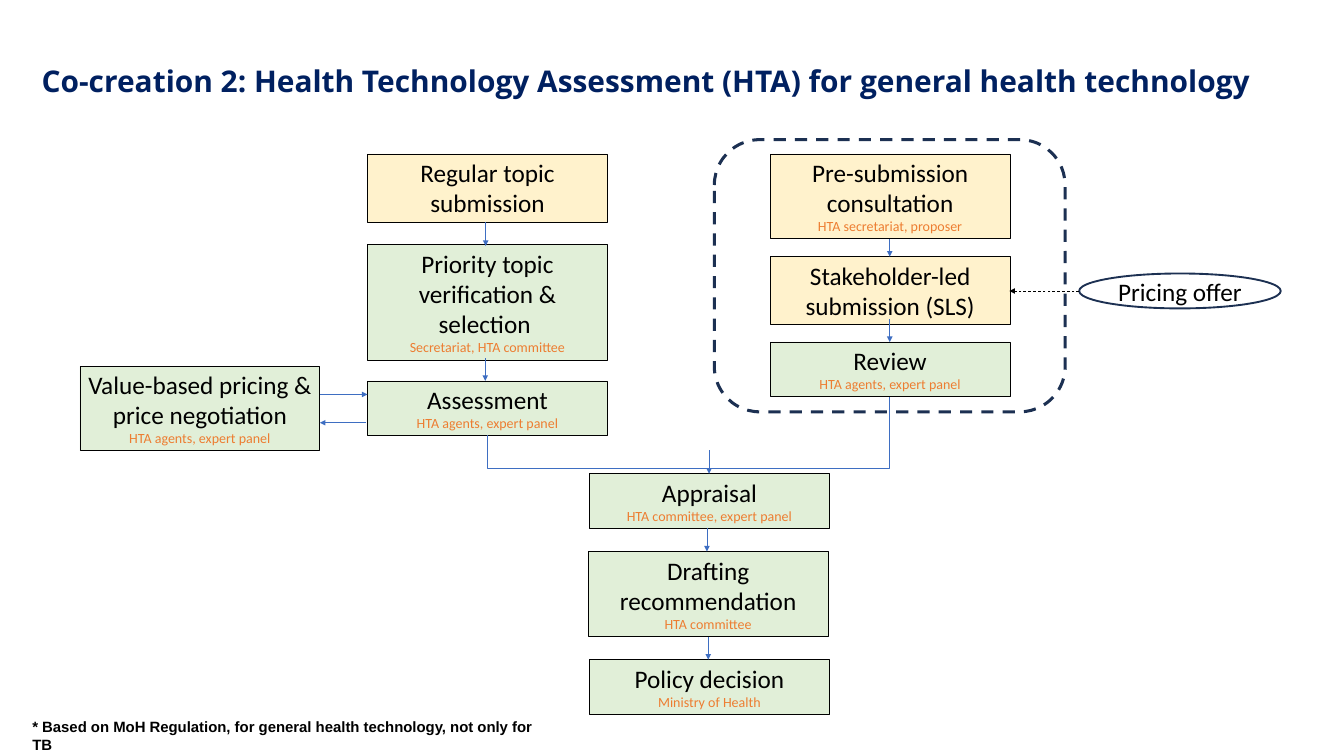
from lxml.etree import SubElement
from pptx import Presentation
from pptx.dml.color import RGBColor
from pptx.enum.dml import MSO_LINE_DASH_STYLE as Dash
from pptx.enum.shapes import MSO_CONNECTOR as Connector, MSO_SHAPE as Shape
from pptx.enum.text import MSO_ANCHOR as Anchor, MSO_AUTO_SIZE as AutoSize, PP_ALIGN as Align
from pptx.oxml.ns import qn
from pptx.util import Cm, Pt

BLACK = RGBColor(0x00, 0x00, 0x00)
NAVY = RGBColor(0x00, 0x20, 0x60)
OUTLINE = RGBColor(0x1C, 0x30, 0x52)
BLUE = RGBColor(0x3E, 0x6E, 0xC2)
ORANGE = RGBColor(0xED, 0x7D, 0x31)
YELLOW = RGBColor(0xFF, 0xF2, 0xCC)
GREEN = RGBColor(0xE1, 0xEF, 0xD8)

BOX_WIDTH = 9.07
LEFT_COLUMN, RIGHT_COLUMN, CENTRE_COLUMN = 13.89, 29.11, 22.28
ONE_LINE, TWO_LINES, TWO_LINES_ROLE, THREE_LINES_ROLE = 2.06, 2.57, 3.2, 4.37


def write(paragraph, text, size, color, font="Calibri", bold=False, align=Align.CENTER):
    paragraph.text = text
    paragraph.alignment = align
    for run in paragraph.runs:
        run.font.name = font
        run.font.size = Pt(size)
        run.font.bold = bold
        run.font.color.rgb = color


def connect(kind, start_x, start_y, end_x, end_y, color=BLUE, arrow=True):
    connector = slide.shapes.add_connector(kind, Cm(start_x), Cm(start_y), Cm(end_x), Cm(end_y))
    connector.line.color.rgb = color
    connector.line.width = Pt(0.75)
    properties = connector.element.spPr
    SubElement(properties, qn("a:effectLst"))
    if arrow:
        SubElement(connector.line._get_or_add_ln(), qn("a:tailEnd"), type="triangle")
    return connector


presentation = Presentation()
presentation.slide_width = Cm(50.8)
presentation.slide_height = Cm(28.58)
slide = presentation.slides.add_slide(presentation.slide_layouts[5])

title = slide.shapes.title
title.left, title.top, title.width, title.height = Cm(1.32), Cm(0.84), Cm(50.8), Cm(4.55)
title.text_frame.vertical_anchor = Anchor.MIDDLE
heading = title.text_frame.paragraphs[0]
write(heading, "Co-creation 2: Health Technology Assessment (HTA) for general health technology",
      32, NAVY, "Open Sans", True, Align.LEFT)
heading.line_spacing = 0.9

boxes = [
    (LEFT_COLUMN, 5.82, TWO_LINES, YELLOW, "Regular topic submission", None),
    (LEFT_COLUMN, 9.25, THREE_LINES_ROLE, GREEN, "Priority topic verification & selection ",
     "Secretariat, HTA committee"),
    (LEFT_COLUMN, 14.4, ONE_LINE, GREEN, "Assessment", "HTA agents, expert panel"),
    (3.02, 13.84, TWO_LINES_ROLE, GREEN, "Value-based pricing & price negotiation",
     "HTA agents, expert panel"),
    (RIGHT_COLUMN, 5.82, TWO_LINES_ROLE, YELLOW, "Pre-submission consultation",
     "HTA secretariat, proposer"),
    (RIGHT_COLUMN, 9.7, TWO_LINES, YELLOW, "Stakeholder-led submission (SLS)", None),
    (RIGHT_COLUMN, 12.93, ONE_LINE, GREEN, "Review", "HTA agents, expert panel"),
    (CENTRE_COLUMN, 17.91, ONE_LINE, GREEN, "Appraisal", "HTA committee, expert panel"),
    (22.23, 20.85, TWO_LINES_ROLE, GREEN, "Drafting recommendation", "HTA committee"),
    (CENTRE_COLUMN, 24.94, ONE_LINE, GREEN, "Policy decision", "Ministry of Health"),
]
for left, top, height, fill, step, role in boxes:
    box = slide.shapes.add_shape(Shape.RECTANGLE, Cm(left), Cm(top), Cm(BOX_WIDTH), Cm(height))
    box.shadow.inherit = False
    box.fill.solid()
    box.fill.fore_color.rgb = fill
    box.line.color.rgb = BLACK
    box.line.width = Pt(0.75)
    frame = box.text_frame
    frame.word_wrap = True
    frame.auto_size = AutoSize.SHAPE_TO_FIT_TEXT
    frame.vertical_anchor = Anchor.TOP
    write(frame.paragraphs[0], step, 27, BLACK)
    if role:
        write(frame.add_paragraph(), role, 15, ORANGE)

outlines = [
    (Shape.OVAL, 40.79, 10.34, 7.62, 1.32, 2),
    (Shape.ROUNDED_RECTANGLE, 27, 5.28, 13.26, 10.29, 3.25),
]
outlined = []
for kind, left, top, width, height, weight in outlines:
    shape = slide.shapes.add_shape(kind, Cm(left), Cm(top), Cm(width), Cm(height))
    shape.shadow.inherit = False
    shape.fill.background()
    shape.line.color.rgb = OUTLINE
    shape.line.width = Pt(weight)
    outlined.append(shape)
pricing_offer, submission_group = outlined
pricing_offer.text_frame.word_wrap = True
pricing_offer.text_frame.vertical_anchor = Anchor.MIDDLE
write(pricing_offer.text_frame.paragraphs[0], "Pricing offer", 27, BLACK)
submission_group.line.dash_style = Dash.DASH

down_arrows = [
    (18.36, 8.41, 9.3), (18.34, 13.54, 14.4),
    (33.63, 9.04, 9.7), (33.63, 12.07, 12.93),
    (26.8, 17.02, 17.91), (26.72, 19.96, 20.85), (26.77, 24.08, 24.94),
]
for x, start_y, end_y in down_arrows:
    connect(Connector.STRAIGHT, x, start_y, x, end_y)
connect(Connector.STRAIGHT, 12.09, 14.91, LEFT_COLUMN, 14.91)
connect(Connector.STRAIGHT, 13.82, 15.98, 12.09, 15.98)

offer_arrow = connect(Connector.STRAIGHT, 40.79, 11, 38.15, 11, BLACK)
offer_arrow.line.dash_style = Dash.DASH

merge_line = connect(Connector.ELBOW, 25.3, 8.13, 26.77, 23.32, arrow=False)
merge_line.element.spPr.find(qn("a:xfrm")).set("rot", str(270 * 60000))
adjustments = merge_line.element.spPr.find(qn("a:prstGeom")).find(qn("a:avLst"))
SubElement(adjustments, qn("a:gd"), name="adj1", fmla="val -86000")

footnote = slide.shapes.add_textbox(Cm(0.97), Cm(27), Cm(19.46), Cm(1.63))
footnote.text_frame.word_wrap = True
footnote.text_frame.auto_size = AutoSize.SHAPE_TO_FIT_TEXT
write(footnote.text_frame.paragraphs[0],
      "* Based on MoH Regulation, for general health technology, not only for TB",
      16, BLACK, "Arial", True, Align.LEFT)

presentation.save("out.pptx")
